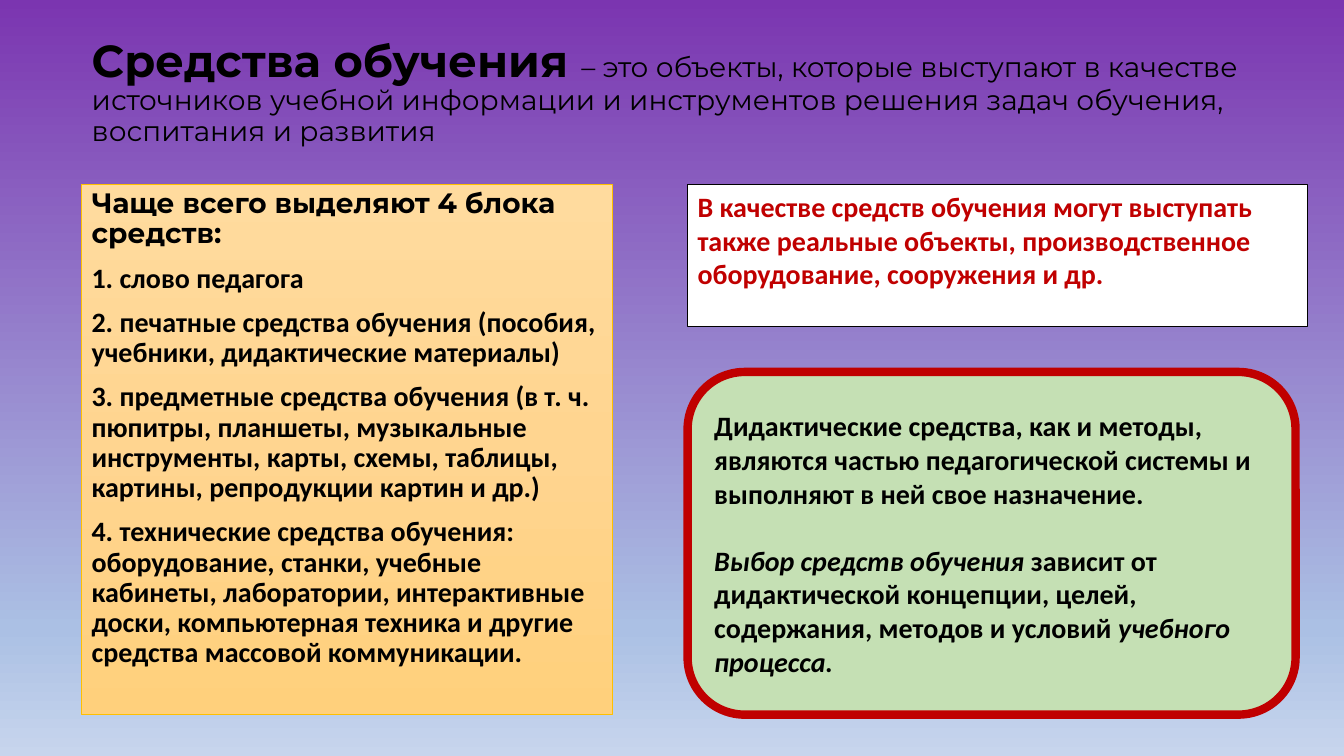
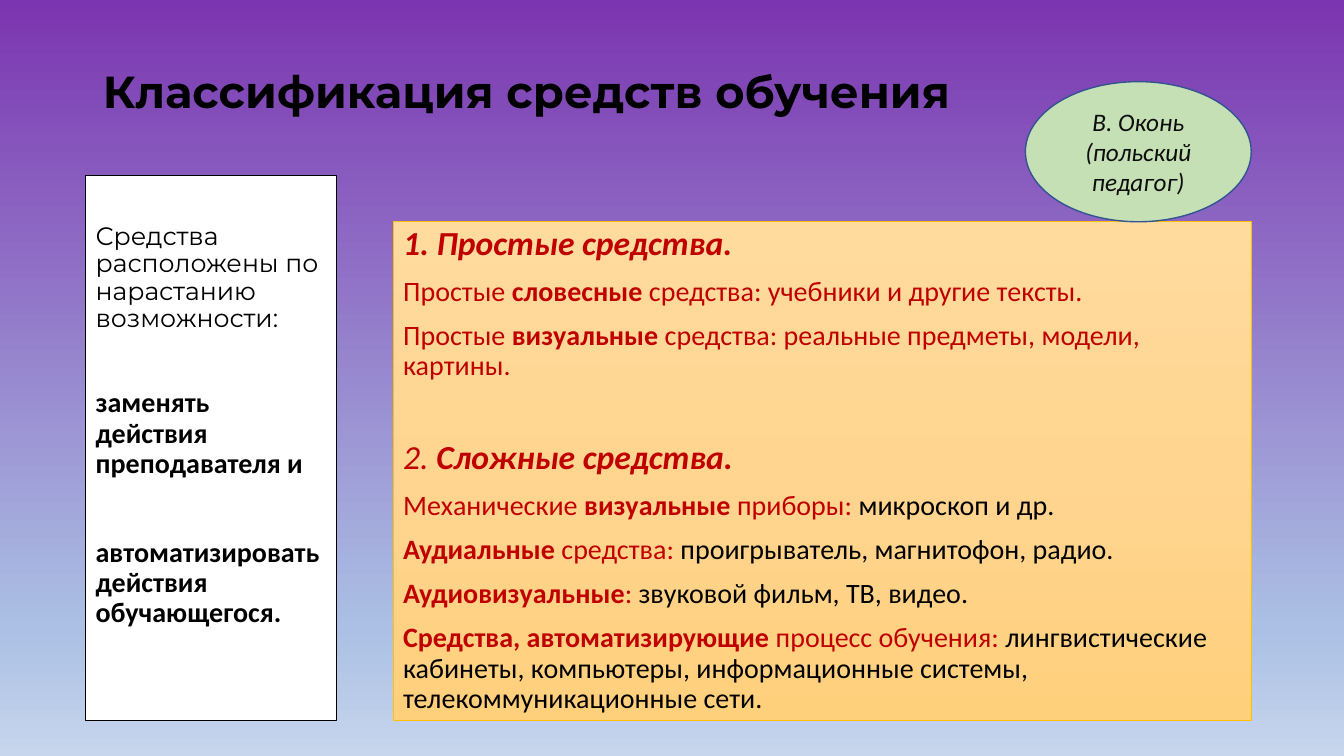
"""Build two slides about teaching aids and their classification."""
from lxml.etree import SubElement
from pptx import Presentation
from pptx.dml.color import RGBColor
from pptx.enum.shapes import MSO_SHAPE
from pptx.enum.text import MSO_ANCHOR, MSO_AUTO_SIZE, PP_ALIGN
from pptx.oxml.ns import qn
from pptx.util import Inches, Pt

COLORS = {
    "black": "000000", "ink": "0D0D0D", "white": "FFFFFF", "red": "C00000",
    "green": "C5E0B4", "gold": "FFC000", "blue": "325491",
}
GRADIENTS = {
    "background": [(0, "7B35B0"), (83, "ABC0E4"), (100, "C7D5ED")],
    "amber": [(0, "FFDB9E"), (50, "FFD590"), (100, "FFD07C")],
}

BASE = {"name": "Calibri", "size": 20, "bold": False, "italic": False, "color": "black"}
STYLES = {
    "title": {"name": "Montserrat", "size": 32, "bold": True},
    "subtitle": {"name": "Montserrat"},
    "lead": {"name": "Montserrat", "bold": True},
    "intro": {"name": "Montserrat", "size": 18},
    "plain": {},
    "bold": {"bold": True},
    "bold italic": {"bold": True, "italic": True},
    "red": {"color": "red"},
    "red bold": {"color": "red", "bold": True},
    "heading": {"color": "red", "size": 24, "bold": True, "italic": True},
    "heading number": {"color": "red", "size": 24, "italic": True},
    "caption": {"color": "ink", "size": 18, "italic": True},
}

PANELS = {
    "amber": {"shape": MSO_SHAPE.RECTANGLE, "line": ("gold", 0.5), "spacing": 0.9, "before": 10},
    "column": {"shape": MSO_SHAPE.RECTANGLE, "fill": "white", "line": ("black", 1),
               "spacing": 0.9, "before": 10, "top": 0.48},
    "note": {"shape": MSO_SHAPE.RECTANGLE, "fill": "white", "line": ("black", 1)},
    "rounded": {"shape": MSO_SHAPE.ROUNDED_RECTANGLE, "fill": "green", "line": ("red", 6),
                "anchor": MSO_ANCHOR.MIDDLE},
    "oval": {"shape": MSO_SHAPE.OVAL, "fill": "green", "line": ("blue", 1),
             "anchor": MSO_ANCHOR.MIDDLE, "align": PP_ALIGN.CENTER},
}

SLIDES = [
    {
        "title": [
            ("Средства обучения ", "title"),
            ("– это объекты, которые выступают в качестве источников учебной информации "
             "и инструментов решения задач обучения, воспитания и развития", "subtitle"),
        ],
        "title_box": (0.81, 0.34, 12.02, 1.16),
        "panels": [
            ("amber", (0.81, 1.83, 5.26, 5.26), [
                [("Чаще всего выделяют 4 блока средств:", "lead")],
                [("1. слово педагога", "bold")],
                [("2. печатные средства обучения (пособия, учебники, дидактические материалы)",
                  "bold")],
                [("3. предметные средства обучения (в т. ч. пюпитры, планшеты, музыкальные "
                  "инструменты, карты, схемы, таблицы, картины, репродукции картин и др.)",
                  "bold")],
                [("4. технические средства обучения: оборудование, станки, учебные кабинеты, "
                  "лаборатории, интерактивные доски, компьютерная техника и другие средства "
                  "массовой коммуникации.", "bold")],
            ], {}),
            ("note", (6.82, 1.83, 6.15, 1.41), [
                [("В качестве средств обучения могут выступать также реальные объекты, "
                  "производственное оборудование, сооружения и др.", "red bold")],
            ], {}),
            ("rounded", (6.82, 3.69, 6.03, 3.4), [
                [("Дидактические средства, как и методы, являются частью педагогической "
                  "системы и выполняют в ней свое назначение.", "bold")],
                [("Выбор средств обучения ", "bold italic"),
                 ("зависит от дидактической концепции, целей, содержания, методов и условий ",
                  "bold"),
                 ("учебного процесса.", "bold italic")],
            ], {1: 24}),
        ],
    },
    {
        "title": [("Классификация средств обучения", "title")],
        "title_box": (0.92, 0.46, 11.5, 0.95),
        "panels": [
            ("column", (0.85, 1.74, 2.49, 5.41), [
                [("Средства расположены по нарастанию возможности:", "intro")],
                [("заменять действия преподавателя и", "bold")],
                [("автоматизировать действия обучающегося.", "bold")],
            ], {1: 40, 2: 42}),
            ("amber", (3.9, 2.2, 8.51, 4.95), [
                [("1. Простые средства.", "heading")],
                [("Простые ", "red"), ("словесные", "red bold"),
                 (" средства: учебники и другие тексты.", "red")],
                [("Простые ", "red"), ("визуальные", "red bold"),
                 (" средства: реальные предметы, модели, картины.", "red")],
                [("2. ", "heading number"), ("Сложные средства.", "heading")],
                [("Механические ", "red"), ("визуальные ", "red bold"), ("приборы: ", "red"),
                 ("микроскоп и др.", "plain")],
                [("Аудиальные", "red bold"), (" средства: ", "red"),
                 ("проигрыватель, магнитофон, радио.", "plain")],
                [("Аудиовизуальные", "red bold"), (": ", "red"),
                 ("звуковой фильм, ТВ, видео.", "plain")],
                [("Средства, автоматизирующие ", "red bold"), ("процесс обучения: ", "red"),
                 ("лингвистические кабинеты, компьютеры, информационные системы, "
                  "телекоммуникационные сети.", "plain")],
            ], {3: 42}),
            ("oval", (10.17, 0.81, 2.24, 1.39), [
                [("В. Оконь (польский педагог)", "caption")],
            ], {}),
        ],
    },
]


def rgb(name):
    return RGBColor.from_string(COLORS[name])


def fill_gradient(fill, element, stops):
    fill.gradient()
    fill.gradient_angle = 270
    stop_list = element.xpath(".//a:gsLst")[0]
    for stop in list(stop_list):
        stop_list.remove(stop)
    for percent, color in stops:
        stop = SubElement(stop_list, qn("a:gs"), pos=str(percent * 1000))
        SubElement(stop, qn("a:srgbClr"), val=color)


def write_paragraph(paragraph, runs, **formats):
    for attribute, value in formats.items():
        setattr(paragraph, attribute, value)
    for text, style in runs:
        values = {**BASE, **STYLES[style]}
        run = paragraph.add_run()
        run.text = text
        run.font.color.rgb = rgb(values.pop("color"))
        values["size"] = Pt(values["size"])
        for attribute, value in values.items():
            setattr(run.font, attribute, value)


def format_frame(frame, anchor, top=0.05):
    formats = {
        "word_wrap": True, "auto_size": MSO_AUTO_SIZE.NONE, "vertical_anchor": anchor,
        "margin_left": Inches(0.1), "margin_right": Inches(0.1),
        "margin_top": Inches(top), "margin_bottom": Inches(0.05),
    }
    for attribute, value in formats.items():
        setattr(frame, attribute, value)


def set_title(slide, box, runs):
    title = slide.shapes.title
    for attribute, value in zip(("left", "top", "width", "height"), box):
        setattr(title, attribute, Inches(value))
    format_frame(title.text_frame, MSO_ANCHOR.MIDDLE)
    write_paragraph(title.text_frame.paragraphs[0], runs,
                    alignment=PP_ALIGN.LEFT, line_spacing=0.9)


def add_panel(slide, kind, box, paragraphs, gaps):
    panel = PANELS[kind]
    shape = slide.shapes.add_shape(panel["shape"], *map(Inches, box))
    shape.shadow.inherit = False
    if kind in GRADIENTS:
        fill_gradient(shape.fill, shape.element, GRADIENTS[kind])
    else:
        shape.fill.solid()
        shape.fill.fore_color.rgb = rgb(panel["fill"])
    color, width = panel["line"]
    shape.line.color.rgb = rgb(color)
    shape.line.width = Pt(width)
    frame = shape.text_frame
    format_frame(frame, panel.get("anchor", MSO_ANCHOR.TOP), panel.get("top", 0.05))
    for index, runs in enumerate(paragraphs):
        paragraph = frame.add_paragraph() if index else frame.paragraphs[0]
        before = gaps.get(index, panel.get("before", 0) if index else 0)
        write_paragraph(paragraph, runs, alignment=panel.get("align", PP_ALIGN.LEFT),
                        line_spacing=panel.get("spacing", 1.0), space_before=Pt(before))


def main():
    presentation = Presentation()
    presentation.slide_width = Inches(13.33)
    presentation.slide_height = Inches(7.5)
    master = presentation.slide_master
    fill_gradient(master.background.fill, master.element, GRADIENTS["background"])
    for content in SLIDES:
        slide = presentation.slides.add_slide(presentation.slide_layouts[5])
        set_title(slide, content["title_box"], content["title"])
        for panel in content["panels"]:
            add_panel(slide, *panel)
    presentation.save("out.pptx")


if __name__ == "__main__":
    main()
